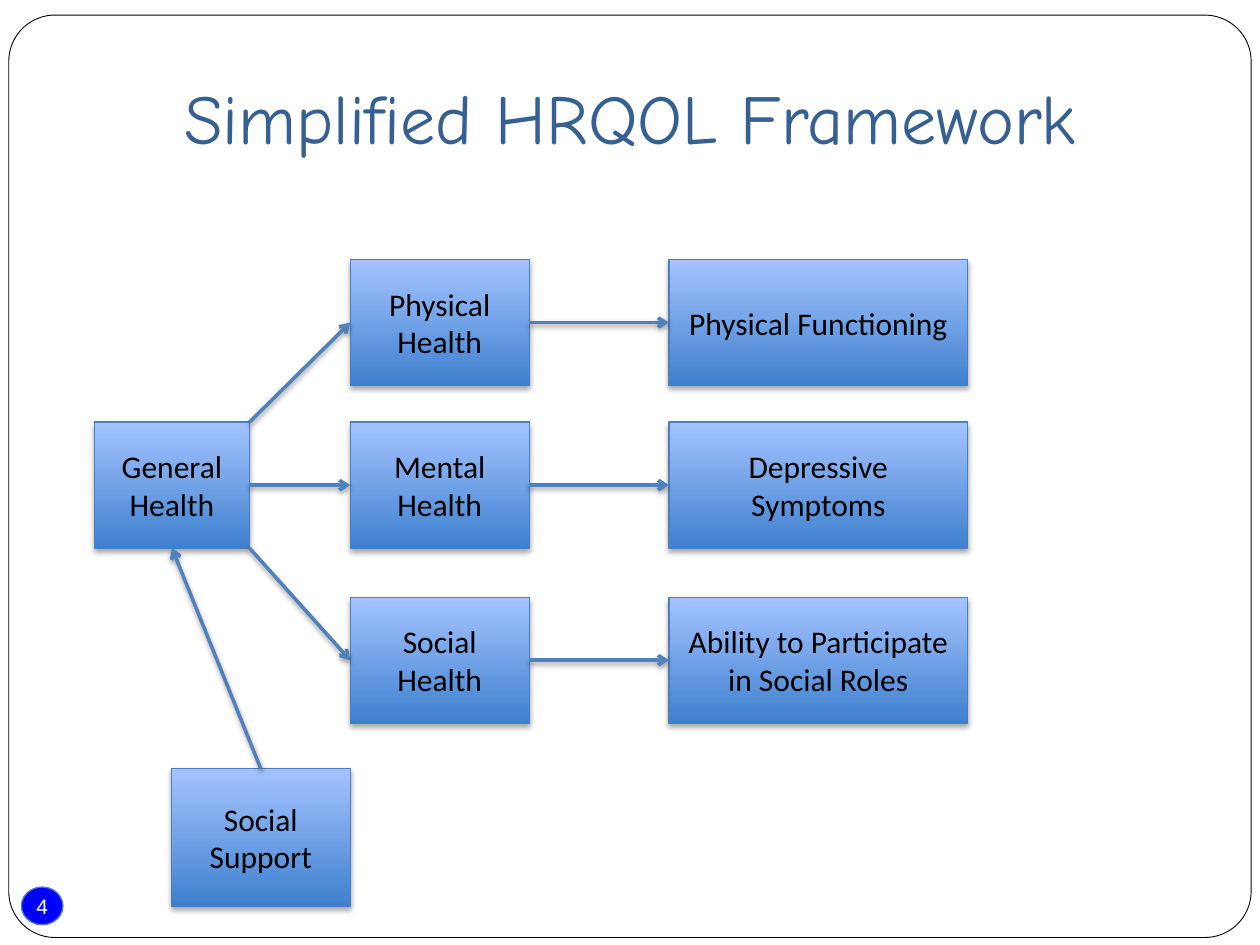
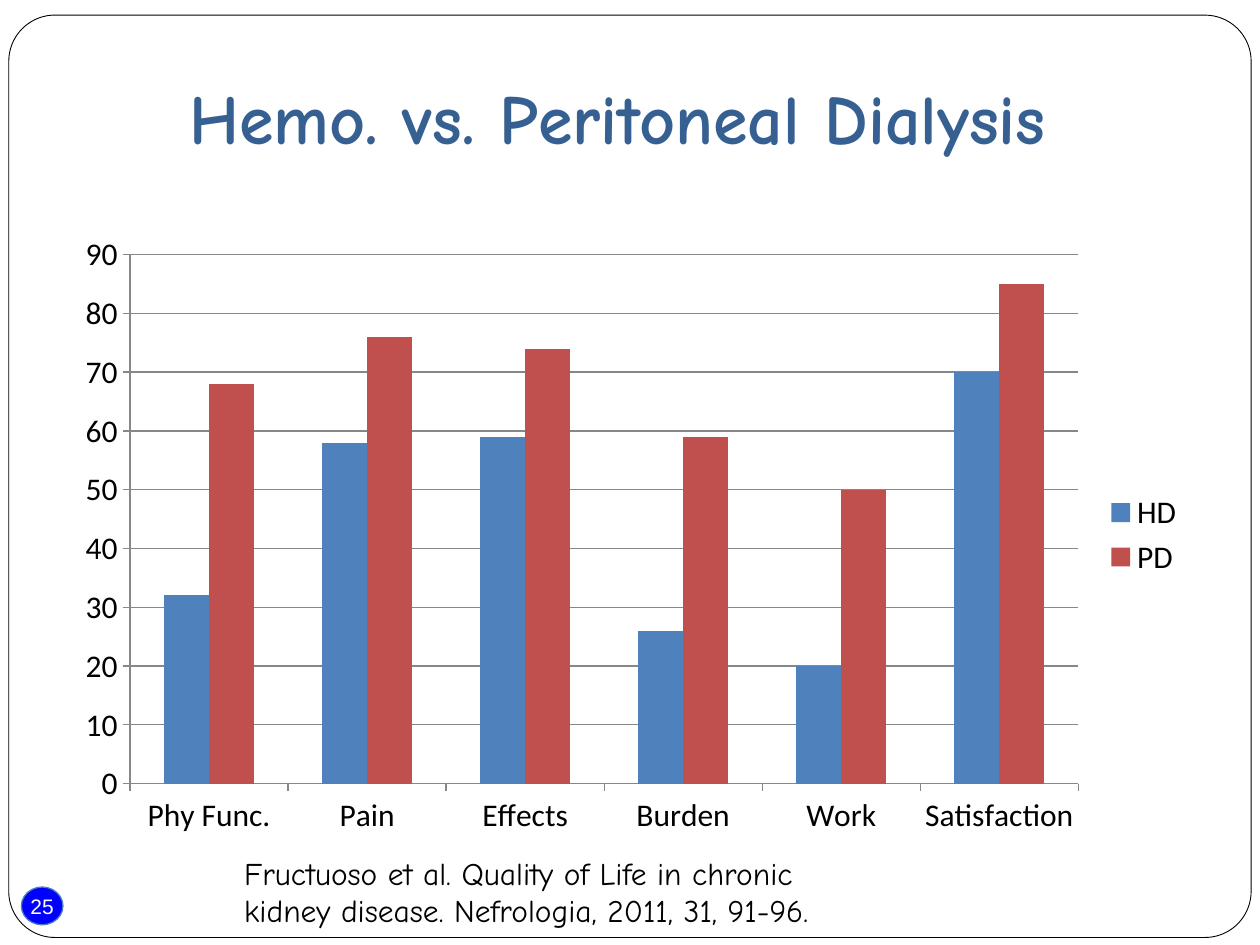
from lxml.etree import SubElement
from pptx import Presentation
from pptx.chart.data import CategoryChartData
from pptx.dml.color import RGBColor
from pptx.enum.chart import XL_CHART_TYPE, XL_LEGEND_POSITION, XL_TICK_MARK
from pptx.enum.shapes import MSO_CONNECTOR, MSO_SHAPE
from pptx.enum.text import MSO_ANCHOR, PP_ALIGN
from pptx.oxml.ns import qn
from pptx.util import Inches, Pt

BLUE, RED, EDGE, GREY = "4F81BD", "C0504D", "4B7EBC", "878787"
LIGHT, DARK, NAVY, BLACK = "A4C4FF", "3F80CE", "376092", "000000"
HAND, SANS = "Comic Neue", "Calibri"


def paint(color, code):
    color.rgb = RGBColor.from_string(code)


def write(shape, text, face, size, code, bold=False, align=PP_ALIGN.CENTER):
    frame = shape.text_frame
    frame.word_wrap = True
    frame.vertical_anchor = MSO_ANCHOR.MIDDLE
    frame.text = text
    line = frame.paragraphs[0]
    line.alignment = align
    line.font.name, line.font.size, line.font.bold = face, Pt(size), bold
    paint(line.font.color, code)


deck = Presentation()
deck.slide_width, deck.slide_height = Inches(10), Inches(7.5)

# Shared badge, frame and title
slides = []
for number, title, bold in (
    ("4", "Simplified HRQOL Framework", False),
    ("25", "Hemo. vs. Peritoneal Dialysis ", True),
):
    slide = deck.slides.add_slide(deck.slide_layouts[6])
    slides.append(slide)

    badge = slide.shapes.add_shape(
        MSO_SHAPE.OVAL, Inches(0.17), Inches(7.04), Inches(0.33), Inches(0.3))
    badge.shadow.inherit = False
    badge.fill.solid()
    paint(badge.fill.fore_color, "0000FF")
    paint(badge.line.color, EDGE)
    badge.line.width = Pt(0.75)
    inner = badge.text_frame
    inner.margin_left = inner.margin_right = inner.margin_top = inner.margin_bottom = 0
    write(badge, number, "Arial", 12, "FFFFFF")

    border = slide.shapes.add_shape(
        MSO_SHAPE.ROUNDED_RECTANGLE, Inches(0.07), Inches(0.12), Inches(9.86), Inches(7.32))
    border.adjustments[0] = 0.05
    border.shadow.inherit = False
    border.fill.background()
    paint(border.line.color, BLACK)
    border.line.width = Pt(0.5)

    head = slide.shapes.add_textbox(Inches(0.5), Inches(0.3), Inches(9), Inches(1.25))
    write(head, title, HAND, 40, NAVY, bold)

flow, study = slides

# Framework: three columns (left, width) and three rows (top)
cause, domain, result = (0.75, 1.23), (2.78, 1.42), (5.31, 2.37)
rows = (2.06, 3.35, 4.74)
tall = 1
middle = rows[1]
support = (1.36, 1.42)
base = 6.1

boxes = [("General Health", cause, middle, tall), ("Social Support", support, base, 1.09)]
arrows = [(support[0] + support[1] / 2, base, cause[0] + cause[1] / 2, middle + tall)]
pairs = (
    ("Physical Health", "Physical Functioning"),
    ("Mental Health", "Depressive Symptoms"),
    ("Social Health", "Ability to Participate in Social Roles"),
)
starts = (middle, middle + tall / 2, middle + tall)
for (health, outcome), top, start in zip(pairs, rows, starts):
    boxes += [(health, domain, top, tall), (outcome, result, top, tall)]
    center = top + tall / 2
    arrows += [(sum(cause), start, domain[0], center),
               (sum(domain), center, result[0], center)]

for text, (left, width), top, height in boxes:
    box = flow.shapes.add_shape(
        MSO_SHAPE.RECTANGLE, Inches(left), Inches(top), Inches(width), Inches(height))
    box.fill.gradient()
    box.fill.gradient_angle = 90
    for stop, place, code in zip(box.fill.gradient_stops, (0, 1), (DARK, LIGHT)):
        stop.position = place
        paint(stop.color, code)
    paint(box.line.color, EDGE)
    box.line.width = Pt(0.75)
    write(box, text, SANS, 18, BLACK)

for ends in arrows:
    arrow = flow.shapes.add_connector(MSO_CONNECTOR.STRAIGHT, *map(Inches, ends))
    paint(arrow.line.color, BLUE)
    arrow.line.width = Pt(2)
    SubElement(arrow.line._get_or_add_ln(), qn("a:tailEnd"), type="arrow")

# Dialysis scores
data = CategoryChartData()
data.categories = ("Phy Func.", "Pain", "Effects", "Burden", "Work", "Satisfaction")
data.add_series("HD", (32, 58, 59, 26, 20, 70))
data.add_series("PD", (68, 76, 74, 59, 50, 85))
chart = study.shapes.add_chart(
    XL_CHART_TYPE.COLUMN_CLUSTERED, Inches(0.5), Inches(1.77), Inches(9), Inches(4.95), data).chart
chart.has_title = False
chart.font.name, chart.font.size = SANS, Pt(18)
paint(chart.font.color, BLACK)
chart.has_legend = True
chart.legend.position = XL_LEGEND_POSITION.RIGHT
chart.legend.include_in_layout = False

plot = chart.plots[0]
plot.gap_width, plot.overlap = 150, 0
plot.vary_by_categories = False
for bars, code in zip(plot.series, (BLUE, RED)):
    bars.format.fill.solid()
    paint(bars.format.fill.fore_color, code)

values = chart.value_axis
values.minimum_scale, values.maximum_scale, values.major_unit = 0, 90, 10
values.has_major_gridlines = True
for axis in (values, chart.category_axis):
    axis.major_tick_mark = XL_TICK_MARK.OUTSIDE
    axis.minor_tick_mark = XL_TICK_MARK.NONE
for part in (values, chart.category_axis, values.major_gridlines):
    paint(part.format.line.color, GREY)
    part.format.line.width = Pt(0.75)

cite = study.shapes.add_textbox(Inches(1.84), Inches(6.72), Inches(5), Inches(0.71))
write(cite, "Fructuoso et al. Quality of Life in chronic kidney disease. "
      "Nefrologia, 2011, 31, 91-96.", HAND, 18, BLACK, align=PP_ALIGN.LEFT)

deck.save("out.pptx")
